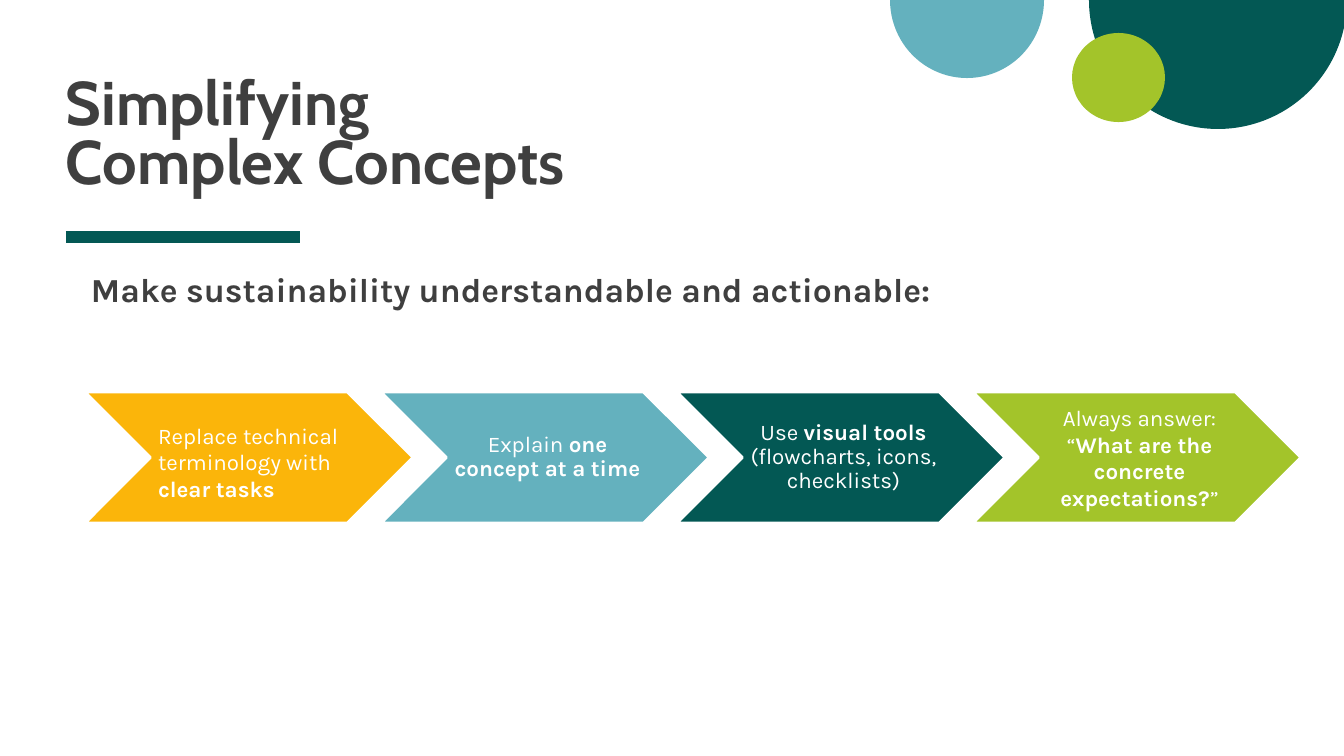
from lxml import etree
from pptx import Presentation
from pptx import util as u
from pptx.dml.color import RGBColor
from pptx.enum import shapes, text
from pptx.oxml.ns import qn

PX = 914400 / 100.8
DARK_GREEN = RGBColor(0x03, 0x58, 0x54)
BLUE = RGBColor(0x64, 0xB1, 0xBE)
LIME = RGBColor(0xA3, 0xC4, 0x2A)
YELLOW = RGBColor(0xFB, 0xB5, 0x0A)
GREY = RGBColor(0x3F, 0x3F, 0x3F)
WHITE = RGBColor(0xFF, 0xFF, 0xFF)
LEFT, CENTER = text.PP_ALIGN.LEFT, text.PP_ALIGN.CENTER
TOP, MIDDLE, BOTTOM = text.MSO_ANCHOR.TOP, text.MSO_ANCHOR.MIDDLE, text.MSO_ANCHOR.BOTTOM

STEP_LEFT, STEP_TOP, STEP_PITCH = 85, 392, 296
STEP_WIDTH, STEP_HEIGHT = 328, 131
LABEL_OFFSET, LABEL_WIDTH = 65, 198

# fill, label drop, alignment, line spacing, (text, bold) runs
STEPS = [
    (YELLOW, 9, LEFT, 1.0,
     [("Replace technical terminology with ", False), ("clear tasks", True)]),
    (BLUE, 0, CENTER, 0.9,
     [("Explain ", False), ("one concept at a time", True)]),
    (DARK_GREEN, 0, CENTER, 0.9,
     [("Use ", False), ("visual tools", True),
      (" (flowcharts, icons, checklists)", False)]),
    (LIME, 0, CENTER, 1.0,
     [("Always answer: “", False),
      ("What are the concrete expectations?", True), ("”", False)]),
]


def px(n):
    return u.Emu(round(n * PX))


def add_filled(s, kind, box, color, adjustments=()):
    sp = s.shapes.add_shape(kind, *map(px, box))
    sp.shadow.inherit = False
    sp.fill.solid()
    sp.fill.fore_color.rgb = color
    sp.line.fill.background()
    for i, value in enumerate(adjustments):
        sp.adjustments[i] = value
    return sp


def add_rule(s, x1, x2, y, color, weight):
    line = s.shapes.add_connector(shapes.MSO_CONNECTOR.STRAIGHT, px(x1), px(y), px(x2), px(y))
    line.line.color.rgb = color
    line.line.width = u.Pt(weight)
    etree.SubElement(line._element.spPr, qn("a:effectLst"))


def add_text(s, box, lines, font, size, color, anchor=TOP, align=LEFT,
             spacing=1.0, margins=(0, 0, 0, 0)):
    """Add one paragraph; each line is a list of (text, bold) runs."""
    tf = s.shapes.add_textbox(*map(px, box)).text_frame
    tf.word_wrap = True
    tf.vertical_anchor = anchor
    tf.margin_left, tf.margin_top, tf.margin_right, tf.margin_bottom = map(px, margins)
    p = tf.paragraphs[0]
    p.alignment = align
    p.line_spacing = spacing
    for i, runs in enumerate(lines):
        if i:
            p.add_line_break()
        for content, bold in runs:
            r = p.add_run()
            r.text = content
            r.font.name = font
            r.font.size = u.Pt(size)
            r.font.bold = bold
            r.font.color.rgb = color


def add_step(s, index, fill, drop, align, spacing, runs):
    x = STEP_LEFT + index * STEP_PITCH
    sp = add_filled(s, shapes.MSO_SHAPE.CHEVRON,
                    (x, STEP_TOP, STEP_WIDTH, STEP_HEIGHT), fill, (0.5,))
    sp.line.color.rgb = WHITE
    sp.line.width = u.Pt(2)
    add_text(s, (x + LABEL_OFFSET, STEP_TOP + drop, LABEL_WIDTH, STEP_HEIGHT - drop),
             [runs], "Karla", 16, WHITE, MIDDLE, align, spacing, (8, 3, 3, 3))


def add_corner_circles(s):
    lower_half = (0, 108)
    add_filled(s, shapes.MSO_SHAPE.PIE, (1089, -129, 258, 258), DARK_GREEN, lower_half)
    add_filled(s, shapes.MSO_SHAPE.PIE, (890, -78, 154, 156), BLUE, lower_half)
    add_filled(s, shapes.MSO_SHAPE.OVAL, (1072, 33, 93, 89), LIME)


def main():
    prs = Presentation()
    prs.slide_width, prs.slide_height = px(1344), px(756)
    s = prs.slides.add_slide(prs.slide_layouts[6])

    add_corner_circles(s)
    add_rule(s, 66, 300, 237, DARK_GREEN, 8)
    add_text(s, (66, 21, 748, 175),
             [[("Simplifying ", True)], [("Complex Concepts", True)]],
             "Cabin", 44, GREY, BOTTOM, spacing=0.8)
    add_text(s, (66, 252, 1129, 114),
             [[("Make sustainability understandable and actionable:", True)]],
             "Karla", 24, GREY, spacing=0.8, margins=(25, 25, 0, 0))
    for i, step in enumerate(STEPS):
        add_step(s, i, *step)

    prs.save("out.pptx")


if __name__ == "__main__":
    main()
